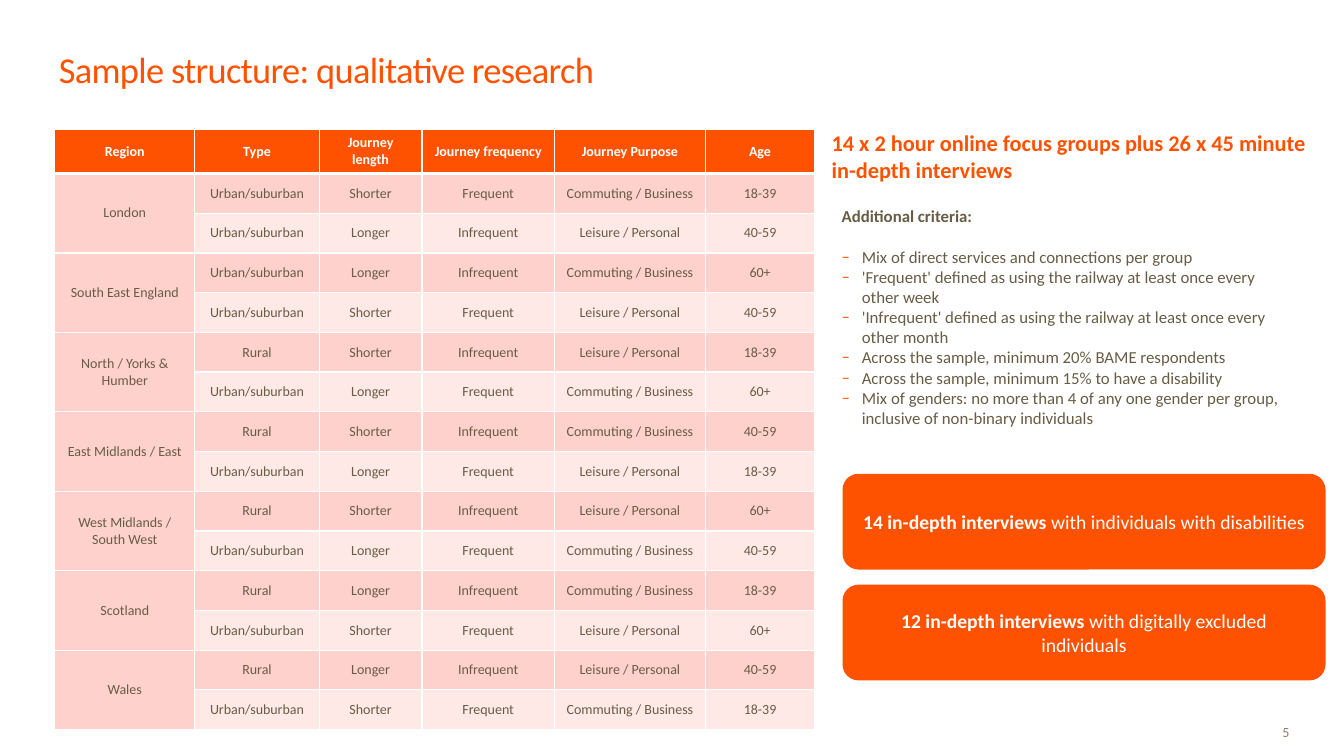
from dataclasses import dataclass
from typing import NamedTuple

from lxml.etree import SubElement
from pptx import Presentation
from pptx.dml.color import RGBColor
from pptx.enum.shapes import MSO_SHAPE as Preset
from pptx.enum.text import MSO_ANCHOR as Anchor, MSO_AUTO_SIZE as AutoSize, PP_ALIGN as Align
from pptx.oxml.ns import qn
from pptx.util import Inches, Pt

COLUMNS, ROWS = 160, 90
WIDTH, HEIGHT = Inches(13.333), Inches(7.5)
FONT = "Calibri"
ORANGE, BROWN, TAUPE, WHITE = "FF5200", "685C45", "8A816B", "FFFFFF"
BANDS = ("FFD1CC", "FFE9E7")
HEADER_HEIGHT, GROUP_HEIGHT = 3.5, 4.73


@dataclass
class Area:
    """A place on the slide in grid columns and rows."""
    column: float
    row: float
    columns: float
    rows: float

    def lengths(self) -> tuple[int, int, int, int]:
        """Return left, top, width and height."""
        return across(self.column), down(self.row), across(self.columns), down(self.rows)


class Group(NamedTuple):
    """One focus group of a region."""
    kind: str
    length: str
    frequency: str
    purpose: str
    age: str


class Interviews(NamedTuple):
    """A callout on in-depth interviews."""
    count: str
    people: str


TOWN, RURAL = "Urban/suburban", "Rural"
SHORT, LONG = "Shorter", "Longer"
OFTEN, SELDOM = "Frequent", "Infrequent"
WORK, LEISURE = "Commuting / Business", "Leisure / Personal"
YOUNG, MIDDLE, OLD = "18-39", "40-59", "60+"

HEADERS = {"Region": 16.7, "Type": 14.8, "Journey length": 12.25,
           "Journey frequency": 15.75, "Journey Purpose": 18, "Age": 13}
REGIONS = {
    "London": (Group(TOWN, SHORT, OFTEN, WORK, YOUNG),
               Group(TOWN, LONG, SELDOM, LEISURE, MIDDLE)),
    "South East England": (Group(TOWN, LONG, SELDOM, WORK, OLD),
                           Group(TOWN, SHORT, OFTEN, LEISURE, MIDDLE)),
    "North / Yorks & Humber": (Group(RURAL, SHORT, SELDOM, LEISURE, YOUNG),
                               Group(TOWN, LONG, OFTEN, WORK, OLD)),
    "East Midlands / East": (Group(RURAL, SHORT, SELDOM, WORK, MIDDLE),
                             Group(TOWN, LONG, OFTEN, LEISURE, YOUNG)),
    "West Midlands / South West": (Group(RURAL, SHORT, SELDOM, LEISURE, OLD),
                                   Group(TOWN, LONG, OFTEN, WORK, MIDDLE)),
    "Scotland": (Group(RURAL, LONG, SELDOM, WORK, YOUNG),
                 Group(TOWN, SHORT, OFTEN, LEISURE, OLD)),
    "Wales": (Group(RURAL, LONG, SELDOM, LEISURE, MIDDLE),
              Group(TOWN, SHORT, OFTEN, WORK, YOUNG)),
}
CRITERIA = (
    "Mix of direct services and connections per group",
    "'Frequent' defined as using the railway at least once every other week",
    "'Infrequent' defined as using the railway at least once every other month",
    "Across the sample, minimum 20% BAME respondents",
    "Across the sample, minimum 15% to have a disability",
    "Mix of genders: no more than 4 of any one gender per group, "
    "inclusive of non-binary individuals",
)
CALLOUTS = (
    Interviews("14 in-depth interviews ", "with individuals with disabilities"),
    Interviews("12 in-depth interviews ", "with digitally excluded individuals"),
)


def across(columns: float) -> int:
    """Turn grid columns into a length."""
    return round(WIDTH * columns / COLUMNS)


def down(rows: float) -> int:
    """Turn grid rows into a length."""
    return round(HEIGHT * rows / ROWS)


def paint(color_format, color: str) -> None:
    """Set a colour from a hex string."""
    color_format.rgb = RGBColor.from_string(color)


def fill(target, color: str) -> None:
    """Fill a shape or cell with a solid colour."""
    target.fill.solid()
    paint(target.fill.fore_color, color)


def write(paragraph, text: str, *, size: float, color: str, bold: bool = False,
          align: Align = Align.LEFT, tracking: int = 0) -> None:
    """Add a formatted run to a paragraph."""
    paragraph.alignment = align
    run = paragraph.add_run()
    run.text = text
    run.font.name, run.font.size, run.font.bold = FONT, Pt(size), bold
    paint(run.font.color, color)
    if tracking:
        run.font._element.set("spc", str(tracking))


def place(shape, area: Area, anchor: Anchor = Anchor.TOP, inset: bool = False):
    """Move a shape to an area and return its prepared text frame."""
    shape.left, shape.top, shape.width, shape.height = area.lengths()
    frame = shape.text_frame
    frame.word_wrap, frame.auto_size, frame.vertical_anchor = True, AutoSize.NONE, anchor
    if not inset:
        frame.margin_left = frame.margin_top = frame.margin_right = frame.margin_bottom = 0
    return frame


def set_bullet(paragraph, character: str = "") -> None:
    """Give a paragraph a hanging orange bullet, or none."""
    properties = paragraph._p.get_or_add_pPr()
    indent = across(2.4) if character else 0
    properties.set("marL", str(indent))
    properties.set("indent", str(-indent))
    if character:
        SubElement(SubElement(properties, qn("a:buClr")), qn("a:srgbClr"), val=ORANGE)
        SubElement(properties, qn("a:buFont"), typeface=FONT)
        SubElement(properties, qn("a:buChar"), char=character)
    else:
        SubElement(properties, qn("a:buNone"))


def set_borders(cell, top: float = 1, bottom: float = 1) -> None:
    """Draw white borders round a cell."""
    properties = cell._tc.get_or_add_tcPr()
    for side, width in {"L": 1, "R": 1, "T": top, "B": bottom}.items():
        line = SubElement(properties, qn(f"a:ln{side}"), w=str(Pt(width)))
        SubElement(SubElement(line, qn("a:solidFill")), qn("a:srgbClr"), val=WHITE)


def add_sample_table(slide) -> None:
    """Add the table of focus groups by region."""
    rows = [tuple(HEADERS)] + [(region if index == 0 else "", *group)
                               for region, groups in REGIONS.items()
                               for index, group in enumerate(groups)]
    area = Area(6.5, 15.4, sum(HEADERS.values()), HEADER_HEIGHT + GROUP_HEIGHT * (len(rows) - 1))
    table = slide.shapes.add_table(len(rows), len(HEADERS), *area.lengths()).table
    for column, width in zip(table.columns, HEADERS.values()):
        column.width = across(width)
    for number, values in enumerate(rows):
        header = number == 0
        table.rows[number].height = down(HEADER_HEIGHT if header else GROUP_HEIGHT)
        for cell, text in zip(table.rows[number].cells, values):
            set_borders(cell, top=3 if number == 1 else 1, bottom=3 if header else 1)
            fill(cell, ORANGE if header else BANDS[(number - 1) % 2])
            cell.vertical_anchor = Anchor.MIDDLE
            if text:
                write(cell.text_frame.paragraphs[0], text, size=10, bold=header,
                      color=WHITE if header else BROWN, align=Align.CENTER)
    for number in range(1, len(rows), 2):
        table.cell(number, 0).merge(table.cell(number + 1, 0))


def add_criteria(placeholder) -> None:
    """Fill the body placeholder with the additional criteria."""
    frame = place(placeholder, Area(100.2, 24.5, 52.2, 27))
    for index, text in enumerate(("Additional criteria:", *CRITERIA)):
        paragraph = frame.add_paragraph() if index else frame.paragraphs[0]
        paragraph.space_before = Pt(14.6 if index == 1 else 0)
        set_bullet(paragraph, "–" if index else "")
        write(paragraph, text, size=12, color=BROWN, bold=index == 0)


def add_callout(slide, interviews: Interviews, area: Area) -> None:
    """Add a rounded callout for one set of interviews."""
    shape = slide.shapes.add_shape(Preset.ROUNDED_RECTANGLE, *area.lengths())
    shape.shadow.inherit = False
    fill(shape, ORANGE)
    shape.line.fill.background()
    paragraph = place(shape, area, Anchor.MIDDLE, inset=True).paragraphs[0]
    for text, bold in zip(interviews, (True, False)):
        write(paragraph, text, size=14, color=WHITE, bold=bold, align=Align.CENTER)


def main() -> None:
    """Build and save the slide."""
    presentation = Presentation()
    presentation.slide_width, presentation.slide_height = WIDTH, HEIGHT
    slide = presentation.slides.add_slide(presentation.slide_layouts[1])
    add_sample_table(slide)
    title = place(slide.shapes.title, Area(7, 4.9, 67.4, 5.9), Anchor.BOTTOM).paragraphs[0]
    title.line_spacing = Pt(29)
    write(title, "Sample structure: qualitative research", size=26, color=ORANGE, tracking=-50)
    add_criteria(slide.placeholders[1])

    heading_area = Area(99, 15.4, 58.9, 6.5)
    heading = place(slide.shapes.add_textbox(*heading_area.lengths()), heading_area)
    write(heading.paragraphs[0], "14 x 2 hour online focus groups plus 26 x 45 minute",
          size=16, color=ORANGE, bold=True)
    write(heading.add_paragraph(), "in-depth interviews", size=16, color=ORANGE, bold=True)

    for index, interviews in enumerate(CALLOUTS):
        add_callout(slide, interviews, Area(100.3, 56.4 + 13.2 * index, 57.5, 11.4))
    number_area = Area(150, 85.6, 4.7, 2.6)
    number = place(slide.shapes.add_textbox(*number_area.lengths()), number_area, inset=True)
    write(number.paragraphs[0], "5", size=10, color=TAUPE, align=Align.RIGHT)
    presentation.save("out.pptx")


if __name__ == "__main__":
    main()
